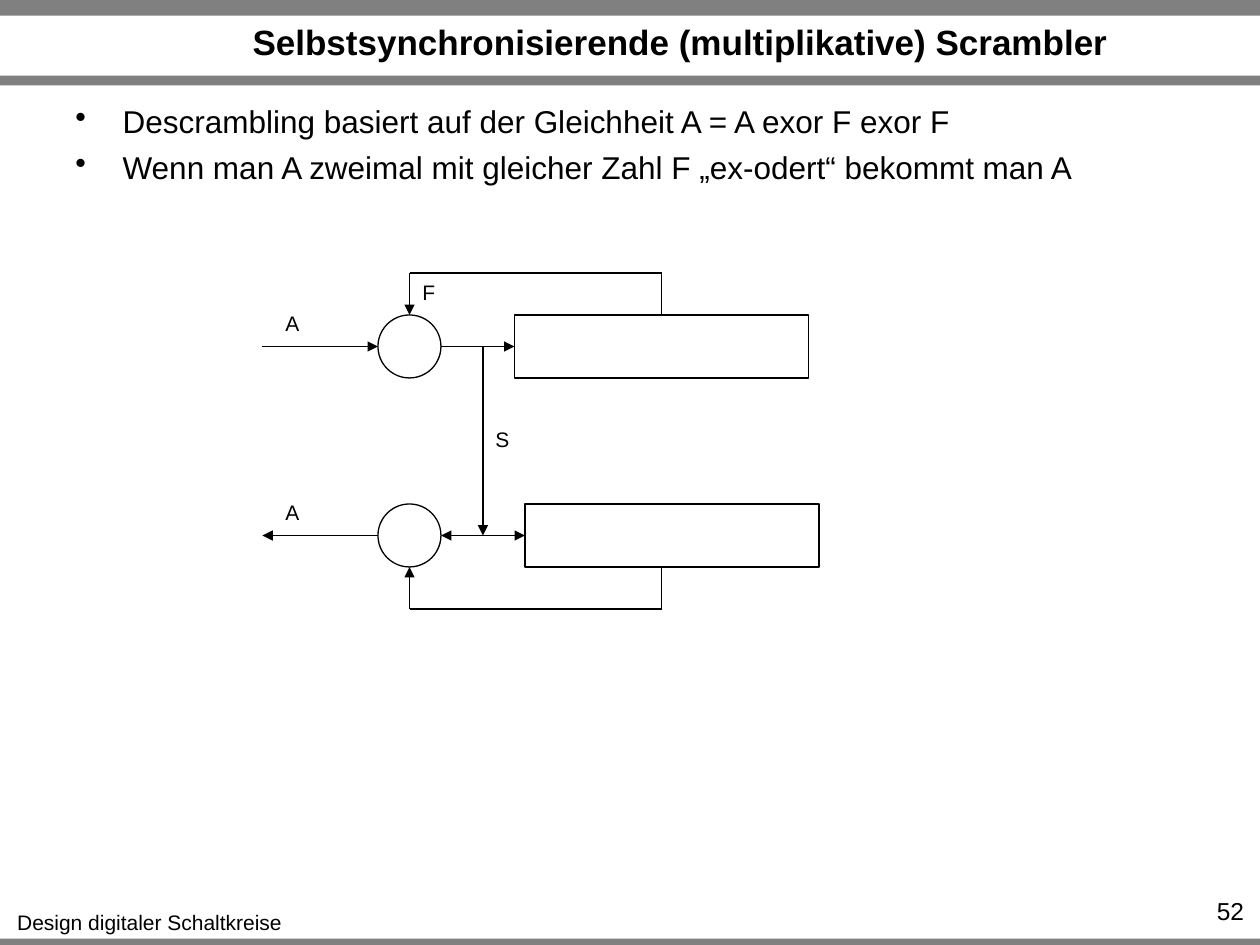
from dataclasses import dataclass

import pptx
import pptx.dml.color
import pptx.enum.shapes
import pptx.enum.text
import pptx.oxml
import pptx.oxml.ns
import pptx.util

Pt = pptx.util.Pt
Align = pptx.enum.text.PP_ALIGN
Anchor = pptx.enum.text.MSO_ANCHOR
Shape = pptx.enum.shapes.MSO_SHAPE


@dataclass(frozen=True)
class Theme:
    ink: str = "000000"
    bar: str = "808080"
    font: str = "Arial"
    title: int = 20
    body: int = 18
    number: int = 14
    label: int = 12
    line: float = 0.75


THEME = Theme()
WIDTH, HEIGHT = 720, 540
NODE = 36           # diameter of an exor node, height of a register
REGISTER_WIDTH = 168
LOOP_GAP = 24       # from a node to the outer run of its feedback loop
NODE_X = 66         # left edge of the nodes within the diagram
LOOP_X = 228        # where the feedback leaves the register
TAP_X = 126         # where the scrambled signal S is tapped


def rgb(colour):
    return pptx.dml.color.RGBColor.from_string(colour)


def add_child(parent, tag, **attributes):
    child = pptx.oxml.parse_xml(f"<a:{tag} {pptx.oxml.ns.nsdecls('a')}/>")
    for key, value in attributes.items():
        child.set(key, value)
    parent.append(child)


def add_text(slide, box, text, *, size, bold=False, align=Align.LEFT,
             anchor=Anchor.TOP, wrap=True, bullet=None, indent=0, gap=0):
    """Place text in a box; each line becomes a paragraph, gap points apart."""
    frame = slide.shapes.add_textbox(*map(Pt, box)).text_frame
    frame.word_wrap = wrap
    frame.vertical_anchor = anchor
    for index, line in enumerate(text.split("\n")):
        paragraph = frame.paragraphs[0] if index == 0 else frame.add_paragraph()
        paragraph.alignment = align
        if index:
            paragraph.space_before = Pt(gap)
        if bullet:
            properties = paragraph._p.get_or_add_pPr()
            properties.set("marL", str(Pt(indent)))
            properties.set("indent", str(-Pt(indent)))
            add_child(properties, "buChar", char=bullet)
        run = paragraph.add_run()
        run.text = line
        run.font.name = THEME.font
        run.font.size = Pt(size)
        run.font.bold = bold
        run.font.color.rgb = rgb(THEME.ink)


def add_label(slide, left, top, text):
    add_text(slide, (left, top, 22, 22), text, size=THEME.label,
             align=Align.CENTER, wrap=False)


def add_bar(slide, top, height):
    bar = slide.shapes.add_shape(Shape.RECTANGLE, *map(Pt, (0, top, WIDTH, height)))
    bar.shadow.inherit = False
    bar.fill.solid()
    bar.fill.fore_color.rgb = rgb(THEME.bar)
    bar.line.fill.background()


def add_outline(slide, kind, box):
    outline = slide.shapes.add_shape(kind, *map(Pt, box))
    outline.shadow.inherit = False
    outline.fill.background()
    outline.line.color.rgb = rgb(THEME.ink)
    outline.line.width = Pt(THEME.line)


def add_wire(slide, *points, arrow=True):
    """Join the points with straight lines; the last one may carry an arrowhead."""
    for start, end in zip(points, points[1:]):
        wire = slide.shapes.add_connector(
            pptx.enum.shapes.MSO_CONNECTOR.STRAIGHT, *map(Pt, start + end))
        wire.line.color.rgb = rgb(THEME.ink)
        wire.line.width = Pt(THEME.line)
        if arrow and end == points[-1]:
            add_child(wire.line._get_or_add_ln(), "tailEnd", type="triangle")
        add_child(wire._element.spPr, "effectLst")


def add_stage(slide, left, top, register_x, side):
    """Exor node, register and feedback loop above (side -1) or below (side 1)."""
    node_x, loop_x = left + NODE_X, left + LOOP_X
    axis_y = top + NODE / 2
    edge_y = axis_y + side * NODE / 2
    outer_y = edge_y + side * LOOP_GAP
    centre_x = node_x + NODE / 2
    add_outline(slide, Shape.OVAL, (node_x, top, NODE, NODE))
    add_outline(slide, Shape.RECTANGLE,
                (left + register_x, top, REGISTER_WIDTH, NODE))
    add_wire(slide, (loop_x, edge_y), (loop_x, outer_y),
             (centre_x, outer_y), (centre_x, edge_y))
    add_label(slide, left + 6, axis_y - 24, "A")


def add_diagram(slide, left, top, height):
    register_x, lower_register_x = 144, 150
    upper_top = top + LOOP_GAP
    lower_top = top + height - LOOP_GAP - NODE
    upper_y, lower_y = upper_top + NODE / 2, lower_top + NODE / 2
    node_left, node_right = left + NODE_X, left + NODE_X + NODE
    tap_x, split_x = left + TAP_X, left + TAP_X - 6

    add_stage(slide, left, upper_top, register_x, -1)
    add_wire(slide, (left, upper_y), (node_left, upper_y))
    add_wire(slide, (node_right, upper_y), (left + register_x, upper_y))
    add_label(slide, node_left + NODE / 2, top, "F")

    add_stage(slide, left, lower_top, lower_register_x, 1)
    add_wire(slide, (node_left, lower_y), (left, lower_y))
    add_wire(slide, (split_x, lower_y), (node_right, lower_y))
    add_wire(slide, (split_x, lower_y), (left + lower_register_x, lower_y))

    add_wire(slide, (tap_x, upper_y), (tap_x, lower_y))
    add_label(slide, tap_x, upper_y + 42, "S")


def add_frame(slide, title, footer, number):
    for top, height in ((536.4, 5.6), (0, 9), (43.2, 5.6)):
        add_bar(slide, top, height)
    add_text(slide, (2, 516, 167, 22), footer, size=THEME.label,
             align=Align.CENTER, wrap=False)
    add_text(slide, (93.6, 10.1, 590.4, 27.4), title, size=THEME.title, bold=True,
             align=Align.CENTER, anchor=Anchor.MIDDLE)
    add_text(slide, (655, 508.3, 63, 17.3), number, size=THEME.number,
             align=Align.RIGHT)


def main():
    presentation = pptx.Presentation()
    presentation.slide_width, presentation.slide_height = Pt(WIDTH), Pt(HEIGHT)
    slide = presentation.slides.add_slide(presentation.slide_layouts[6])
    add_frame(slide, "Selbstsynchronisierende (multiplikative) Scrambler",
              "Design digitaler Schaltkreise", "52")
    add_text(slide, (36, 55, 648, 53),
             "Descrambling basiert auf der Gleichheit A = A exor F exor F\n"
             "Wenn man A zweimal mit gleicher Zahl F „ex-odert“ bekommt man A",
             size=THEME.body, bullet="•", indent=27, gap=4.3)
    add_diagram(slide, 150, 156, 192)
    presentation.save("out.pptx")


if __name__ == "__main__":
    main()
